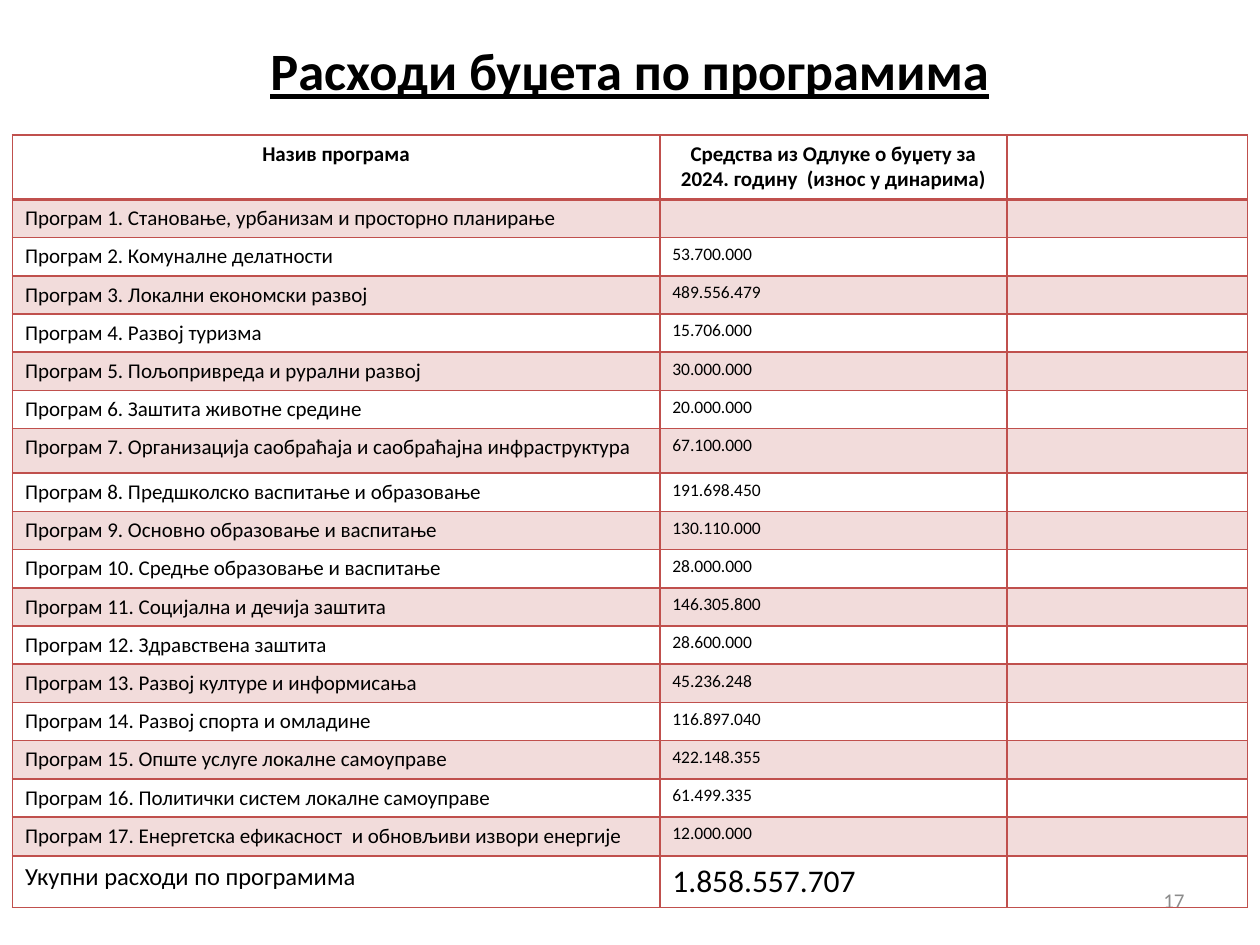
from lxml import etree
from pptx import Presentation
from pptx import util as u
from pptx.dml.color import RGBColor
from pptx.enum import text
from pptx.oxml import ns

BLACK = RGBColor(0x00, 0x00, 0x00)
GRAY = RGBColor(0x8C, 0x8C, 0x8C)
RED = RGBColor(0xC0, 0x50, 0x4D)
FONT = "Calibri"

TITLE = "Расходи буџета по програмима"
PAGE_NUMBER = "17"
HEADINGS = ("Назив програма",
            "Средства из Одлуке о буџету за 2024. годину  (износ у динарима)")
PROGRAMS = [
    ("Становање, урбанизам и просторно планирање", ""),
    ("Комуналне делатности", "53.700.000"),
    ("Локални економски развој", "489.556.479"),
    ("Развој туризма", "15.706.000"),
    ("Пољопривреда и рурални развој", "30.000.000"),
    ("Заштита животне средине", "20.000.000"),
    ("Организација саобраћаја и саобраћајна инфраструктура", "67.100.000"),
    ("Предшколско васпитање и образовање", "191.698.450"),
    ("Основно образовање и васпитање", "130.110.000"),
    ("Средње образовање и васпитање", "28.000.000"),
    ("Социјална и дечија заштита", "146.305.800"),
    ("Здравствена заштита", "28.600.000"),
    ("Развој културе и информисања", "45.236.248"),
    ("Развој спорта и омладине", "116.897.040"),
    ("Опште услуге локалне самоуправе", "422.148.355"),
    ("Политички систем локалне самоуправе", "61.499.335"),
    ("Енергетска ефикасност  и обновљиви извори енергије", "12.000.000"),
]
TOTAL = ("Укупни расходи по програмима", "1.858.557.707")

COLUMN_WIDTHS = (13.05, 7, 4.85)
PROGRAM_HEIGHT = 0.77
SPECIAL_HEIGHTS = {0: 1.3, 7: 0.9, 17: 0.79, 18: 1.03}


def write(frame, words, size, color=BLACK, bold=False, underline=False,
          align=text.PP_ALIGN.LEFT):
    paragraph = frame.paragraphs[0]
    paragraph.alignment = align
    if not words:
        # An empty cell needs its own text size, or it stretches the row.
        paragraph._p.get_or_add_endParaRPr().set("sz", str(size * 100))
        return
    run = paragraph.add_run()
    run.text = words
    font = run.font
    font.name, font.size, font.bold, font.underline = FONT, u.Pt(size), bold, underline
    font.color.rgb = color


def add_label(slide, words, left, top, width, height, **style):
    frame = slide.shapes.add_textbox(*map(u.Cm, (left, top, width, height))).text_frame
    frame.word_wrap = True
    frame.vertical_anchor = text.MSO_ANCHOR.MIDDLE
    write(frame, words, **style)


def set_border(cell, side, points):
    line = etree.SubElement(cell._tc.get_or_add_tcPr(), ns.qn(f"a:ln{side}"),
                            w=str(u.Pt(points)))
    fill = etree.SubElement(line, ns.qn("a:solidFill"))
    etree.SubElement(fill, ns.qn("a:srgbClr"), val=str(RED))


def tint(cell, percent):
    cell.fill.solid()
    cell.fill.fore_color.rgb = RED
    color = cell._tc.tcPr.find(ns.qn("a:solidFill")).find(ns.qn("a:srgbClr"))
    etree.SubElement(color, ns.qn("a:alpha"), val=str(percent * 1000))


def add_budget_table(slide):
    programs = [(f"Програм {number}. {name}", amount)
                for number, (name, amount) in enumerate(PROGRAMS, 1)]
    rows = [HEADINGS, *programs, TOTAL]
    last = len(rows) - 1
    heights = [SPECIAL_HEIGHTS.get(r, PROGRAM_HEIGHT) for r in range(len(rows))]
    table = slide.shapes.add_table(
        len(rows), len(COLUMN_WIDTHS), u.Cm(0.25), u.Cm(2.72),
        u.Cm(sum(COLUMN_WIDTHS)), u.Cm(sum(heights))).table
    table.first_row = table.horz_banding = False
    for column, width in zip(table.columns, COLUMN_WIDTHS):
        column.width = u.Cm(width)

    for r, (row, height) in enumerate(zip(rows, heights)):
        table.rows[r].height = u.Cm(height)
        sizes = {0: (12, 12, 12), last: (14, 18, 18)}.get(r, (12, 10, 10))
        align = text.PP_ALIGN.LEFT if r else text.PP_ALIGN.CENTER
        for c, (words, size) in enumerate(zip((*row, ""), sizes)):
            cell = table.cell(r, c)
            write(cell.text_frame, words, size, bold=r == 0, align=align)
            for side in "LRTB":
                under_header = (r, side) in ((0, "B"), (1, "T"))
                set_border(cell, side, 2 if under_header else 1)
            if r % 2 and r < last:
                tint(cell, 20)
            else:
                cell.fill.background()


def main():
    deck = Presentation()
    deck.slide_width, deck.slide_height = u.Cm(25.4), u.Cm(19.05)
    slide = deck.slides.add_slide(deck.slide_layouts[6])
    add_label(slide, TITLE, 1.88, 0.33, 21.64, 2.16, size=30, bold=True,
              underline=True, align=text.PP_ALIGN.CENTER)
    add_label(slide, PAGE_NUMBER, 18.2, 17.65, 5.93, 1.01, size=12, color=GRAY,
              align=text.PP_ALIGN.RIGHT)
    add_budget_table(slide)
    deck.save("out.pptx")


if __name__ == "__main__":
    main()
